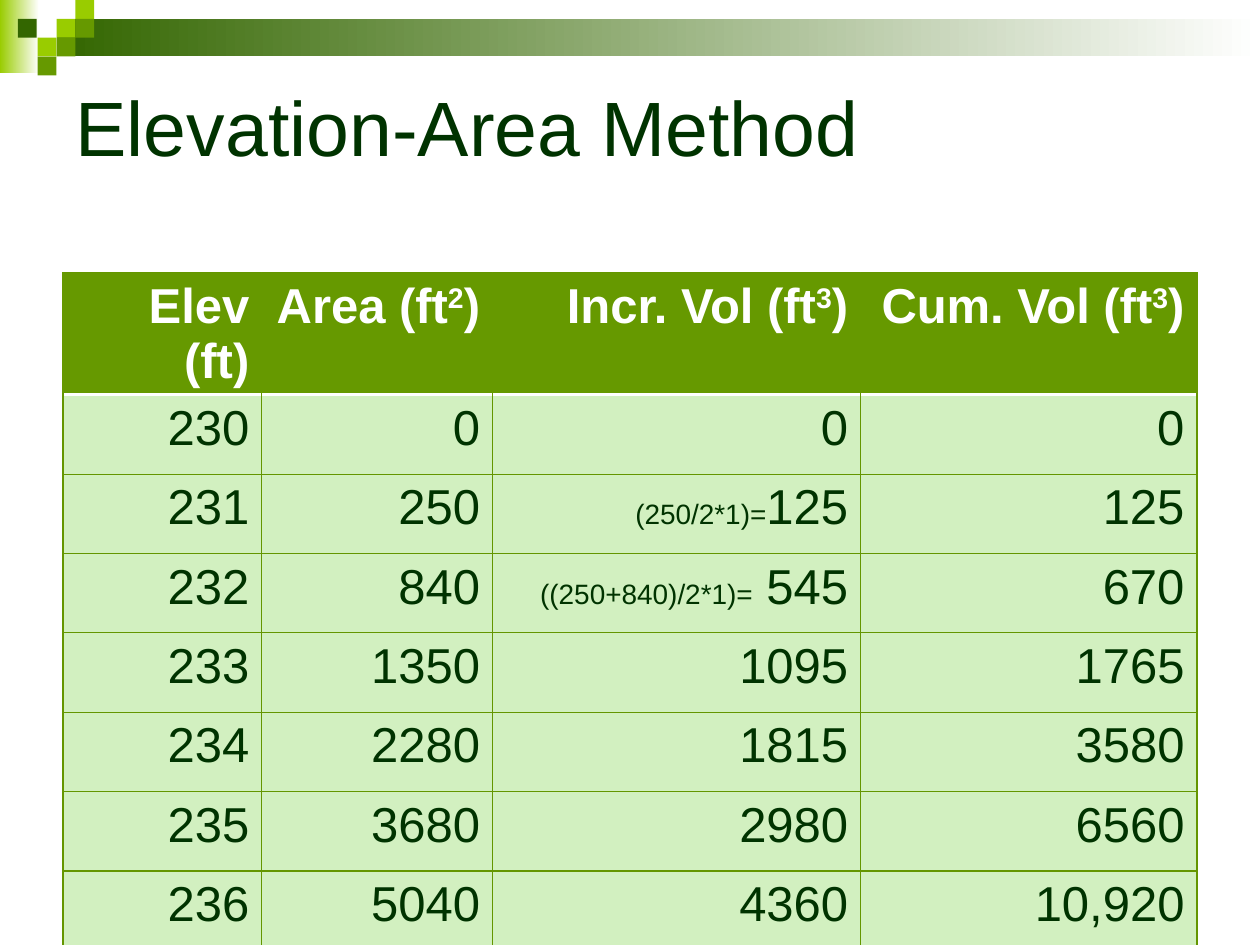
from lxml.etree import SubElement
from pptx import Presentation
from pptx.dml.color import RGBColor
from pptx.enum.shapes import MSO_SHAPE as Shape
from pptx.enum.text import MSO_ANCHOR as Anchor, PP_ALIGN as Align
from pptx.oxml.ns import qn
from pptx.util import Cm, Pt

FONT = "Arial"
DARK, MID, LIME, INK = "336600", "669900", "99CC00", "003300"
BODY, GRID, WHITE = "D2F0C0", "649600", "FFFFFF"

COLUMNS = [4.01, 4.65, 7.42, 6.78]
ROW_HEIGHT = 1.6
# Each cell is a list of (text, style) runs or a plain string.
HEADER = [
    "Elev (ft)",
    [("Area (ft", ""), ("2", "super"), (")", "")],
    [("Incr. Vol (ft", ""), ("3", "super"), (")", "")],
    [("Cum. Vol (ft", ""), ("3", "super"), (")", "")],
]
ROWS = [
    ["230", "0", "0", "0"],
    ["231", "250", [("(250/2*1)=", "small"), ("125", "")], "125"],
    ["232", "840", [("((250+840)/2*1)=", "small"), (" 545", "")], "670"],
    ["233", "1350", "1095", "1765"],
    ["234", "2280", "1815", "3580"],
    ["235", "3680", "2980", "6560"],
    ["236", "5040", "4360", "10,920"],
]


def color(value):
    return RGBColor.from_string(value)


def add_span(para, text, size, ink, bold=False):
    span = para.add_run()
    span.text = text
    span.font.name = FONT
    span.font.size = Pt(size)
    span.font.bold = bold
    span.font.color.rgb = color(ink)
    return span


def add_block(page, left, top, width, height, start, end=None):
    """Add a borderless rectangle, fading left to right if end is given."""
    block = page.shapes.add_shape(
        Shape.RECTANGLE, Cm(left), Cm(top), Cm(width), Cm(height))
    block.shadow.inherit = False
    block.line.fill.background()
    if end is None:
        block.fill.solid()
        block.fill.fore_color.rgb = color(start)
        return
    block.fill.gradient()
    block.fill.gradient_angle = 0
    for stop, value in zip(block.fill.gradient_stops, (start, end)):
        stop.color.rgb = color(value)


def add_banner(page, left, top, width):
    unit = 0.38
    mosaic_left = left + 2 * unit
    bar_left = mosaic_left + unit
    add_block(page, left, top, 0.79, 1.47, LIME, WHITE)
    add_block(page, bar_left, top + unit, left + width - bar_left, 2 * unit,
              DARK, WHITE)
    tiles = [(1, 1, LIME), (2, 0, LIME), (2, 1, MID), (0, 2, LIME),
             (-1.05, 1, DARK), (1, 2, MID), (0, 3, MID)]
    for column, row, fill in tiles:
        add_block(page, mosaic_left + column * unit, top + row * unit,
                  unit, unit, fill)


def place_title(page, text, left, top, width, height):
    title = page.shapes.title
    title.left, title.top = Cm(left), Cm(top)
    title.width, title.height = Cm(width), Cm(height)
    frame = title.text_frame
    frame.word_wrap = True
    frame.vertical_anchor = Anchor.MIDDLE
    para = frame.paragraphs[0]
    para.alignment = Align.LEFT
    add_span(para, text, 44, INK)


def set_border(cell, side, value, points):
    line = SubElement(cell._tc.get_or_add_tcPr(), qn(f"a:ln{side}"),
                      w=str(Pt(points)))
    fill = SubElement(line, qn("a:solidFill"))
    SubElement(fill, qn("a:srgbClr"), val=value)


def fill_cell(cell, content, is_header, is_below_header):
    inner = MID if is_header else GRID
    top = (WHITE, 2) if is_below_header else (GRID, 0.75)
    bottom = (WHITE, 2) if is_header else (GRID, 0.75)
    set_border(cell, "L", inner, 0.75)
    set_border(cell, "R", inner, 0.75)
    set_border(cell, "T", *top)
    set_border(cell, "B", *bottom)
    cell.fill.solid()
    cell.fill.fore_color.rgb = color(MID if is_header else BODY)
    para = cell.text_frame.paragraphs[0]
    para.alignment = Align.RIGHT
    spans = [(content, "")] if isinstance(content, str) else content
    for text, style in spans:
        span = add_span(para, text, 16 if style == "small" else 28,
                        WHITE if is_header else INK, is_header)
        if style == "super":
            span.font._element.set("baseline", "30000")


def add_volume_table(page, left, top):
    rows = [HEADER] + ROWS
    table = page.shapes.add_table(
        len(rows), len(COLUMNS), Cm(left), Cm(top),
        Cm(sum(COLUMNS)), Cm(ROW_HEIGHT * len(rows))).table
    for column, width in zip(table.columns, COLUMNS):
        column.width = Cm(width)
    for r, row in enumerate(rows):
        for c, content in enumerate(row):
            fill_cell(table.cell(r, c), content, r == 0, r == 1)


def main():
    deck = Presentation()
    deck.slide_width, deck.slide_height = Cm(25.4), Cm(19.05)
    page = deck.slides.add_slide(deck.slide_layouts[5])
    add_banner(page, 0, 0, 25.4)
    place_title(page, "Elevation-Area Method", 1.27, 1.27, 22.86, 2.54)
    add_volume_table(page, 1.27, 5.5)
    deck.save("out.pptx")


if __name__ == "__main__":
    main()
